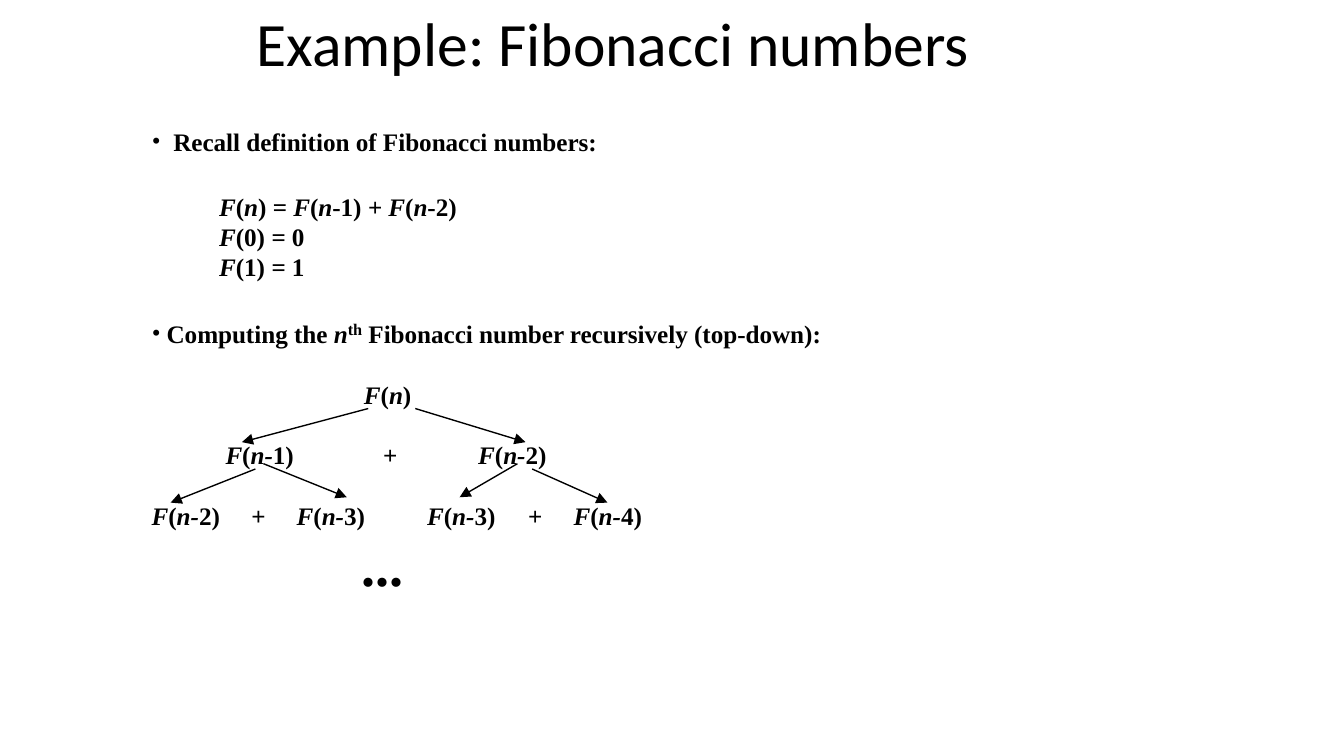
from dataclasses import dataclass

from pptx import Presentation
from pptx.dml.color import RGBColor
from pptx.enum.shapes import MSO_CONNECTOR
from pptx.enum.text import MSO_ANCHOR, MSO_AUTO_SIZE, PP_ALIGN
from pptx.oxml.ns import qn
from pptx.util import Inches, Pt
from lxml import etree

STRAIGHT = MSO_CONNECTOR.STRAIGHT
TOP, MIDDLE = MSO_ANCHOR.TOP, MSO_ANCHOR.MIDDLE
NO_AUTOFIT = MSO_AUTO_SIZE.NONE
LEFT = PP_ALIGN.LEFT
BLACK = RGBColor(0x00, 0x00, 0x00)
TITLE_FONT, BODY_FONT = "Calibri", "Times New Roman"
BODY_SIZE = 13.5
SLIDE_WIDTH = Inches(10)
SLIDE_HEIGHT = SLIDE_WIDTH * 9 // 16
TITLE_BOX = (1.81, 0, 6.38, 0.69)
DEFINITION_BOX = (1.03, 0.89, 7.27, 1.88)
TREE_BOX = (1.03, 2.77, 7.27, 1.73)


@dataclass(frozen=True)
class Line:
    text: str
    gap: float = 0
    indent: float = 0
    bullet: bool = False
    tabs: tuple[float, ...] = ()
    size: float = BODY_SIZE


@dataclass(frozen=True)
class Branch:
    start: tuple[float, float]
    end: tuple[float, float]


DEFINITION = (
    Line("Recall definition of Fibonacci numbers:", 0, 0.16, True),
    Line("*F*(*n*)* = F*(*n*-1)* + F*(*n*-2)", 18.4, 0.5),
    Line("*F*(0)* = *0", 0, 0.5),
    Line("*F*(1)* = *1", 0, 0.5),
    Line("Computing the *n*^th^ Fibonacci number recursively (top-down):",
         18.4, 0.11, True),
)

TREE = (
    Line("\t*F*(*n*)", tabs=(1.58,)),
    Line("\t*F*(*n-*1)\t*+\tF*(*n-*2)", 16.3, tabs=(0.55, 1.72, 2.43)),
    Line("*F*(*n-*2)\t*+\tF*(*n-*3)\t*F*(*n-*3)\t*+\tF*(*n-*4)", 16.3,
         tabs=(0.74, 1.08, 2.05, 2.8, 3.14)),
    Line("\t...", tabs=(1.56,), size=30),
)

BRANCHES = (
    Branch((2.74, 3.04), (1.8, 3.29)),
    Branch((3.09, 3.04), (3.91, 3.29)),
    Branch((1.9, 3.49), (1.27, 3.74)),
    Branch((1.96, 3.45), (2.58, 3.7)),
    Branch((3.85, 3.45), (3.42, 3.7)),
    Branch((3.96, 3.49), (4.52, 3.74)),
)


def apply(target, formats: dict) -> None:
    for name, value in formats.items():
        setattr(target, name, value)


def place(holder, box: tuple[float, ...], anchor) -> None:
    sides = ("left", "top", "width", "height")
    apply(holder, dict(zip(sides, map(Inches, box))))
    apply(holder.text_frame, {"word_wrap": True, "auto_size": NO_AUTOFIT,
                              "vertical_anchor": anchor})


def add_run(paragraph, text: str, formats: dict):
    run = paragraph.add_run()
    run.text = text
    apply(run.font, formats)
    run.font.color.rgb = BLACK
    return run


def set_stops(props, line: Line) -> None:
    stops = etree.SubElement(props, qn("a:tabLst"))
    for stop in line.tabs:
        etree.SubElement(stops, qn("a:tab"), pos=str(Inches(stop)), algn="l")


def set_indent(props, line: Line) -> None:
    props.set("marL", str(Inches(line.indent)))
    props.set("indent", str(-Inches(line.indent) if line.bullet else 0))
    if line.bullet:
        etree.SubElement(props, qn("a:buFont"), typeface=BODY_FONT)
        etree.SubElement(props, qn("a:buChar"), char="•")
    else:
        etree.SubElement(props, qn("a:buNone"))


def write_line(paragraph, line: Line) -> None:
    apply(paragraph, {"alignment": LEFT, "line_spacing": 1.0,
                      "space_before": Pt(line.gap), "space_after": Pt(0)})
    props = paragraph._p.get_or_add_pPr()
    if line.tabs:
        set_stops(props, line)
    else:
        set_indent(props, line)

    for style_index, styled in enumerate(line.text.split("*")):
        for raise_index, piece in enumerate(styled.split("^")):
            if not piece:
                continue
            raised = raise_index % 2 == 1
            run = add_run(paragraph, piece, {
                "name": BODY_FONT, "size": Pt(15 if raised else line.size),
                "bold": True, "italic": style_index % 2 == 1})
            if raised:
                run._r.get_or_add_rPr().set("baseline", "30000")


def write_lines(holder, lines: tuple[Line, ...]) -> None:
    frame = holder.text_frame
    for index, line in enumerate(lines):
        write_line(frame.add_paragraph() if index else frame.paragraphs[0], line)


def draw_branch(slide, branch: Branch) -> None:
    arrow = slide.shapes.add_connector(
        STRAIGHT, *map(Inches, branch.start + branch.end))
    arrow.line.width = Pt(0.75)
    arrow.line.color.rgb = BLACK
    etree.SubElement(arrow.line._get_or_add_ln(), qn("a:tailEnd"), type="triangle")
    etree.SubElement(arrow._element.spPr, qn("a:effectLst"))


def main() -> None:
    deck = Presentation()
    apply(deck, {"slide_width": SLIDE_WIDTH, "slide_height": SLIDE_HEIGHT})
    slide = deck.slides.add_slide(deck.slide_layouts[1])

    title = slide.shapes.title
    place(title, TITLE_BOX, MIDDLE)
    heading = title.text_frame.paragraphs[0]
    apply(heading, {"alignment": LEFT, "line_spacing": 0.9})
    add_run(heading, "Example: Fibonacci numbers",
            {"name": TITLE_FONT, "size": Pt(33)})

    definition = slide.placeholders[1]
    place(definition, DEFINITION_BOX, TOP)
    write_lines(definition, DEFINITION)

    tree = slide.shapes.add_textbox(*map(Inches, TREE_BOX))
    place(tree, TREE_BOX, TOP)
    write_lines(tree, TREE)

    for branch in BRANCHES:
        draw_branch(slide, branch)
    deck.save("out.pptx")


if __name__ == "__main__":
    main()
